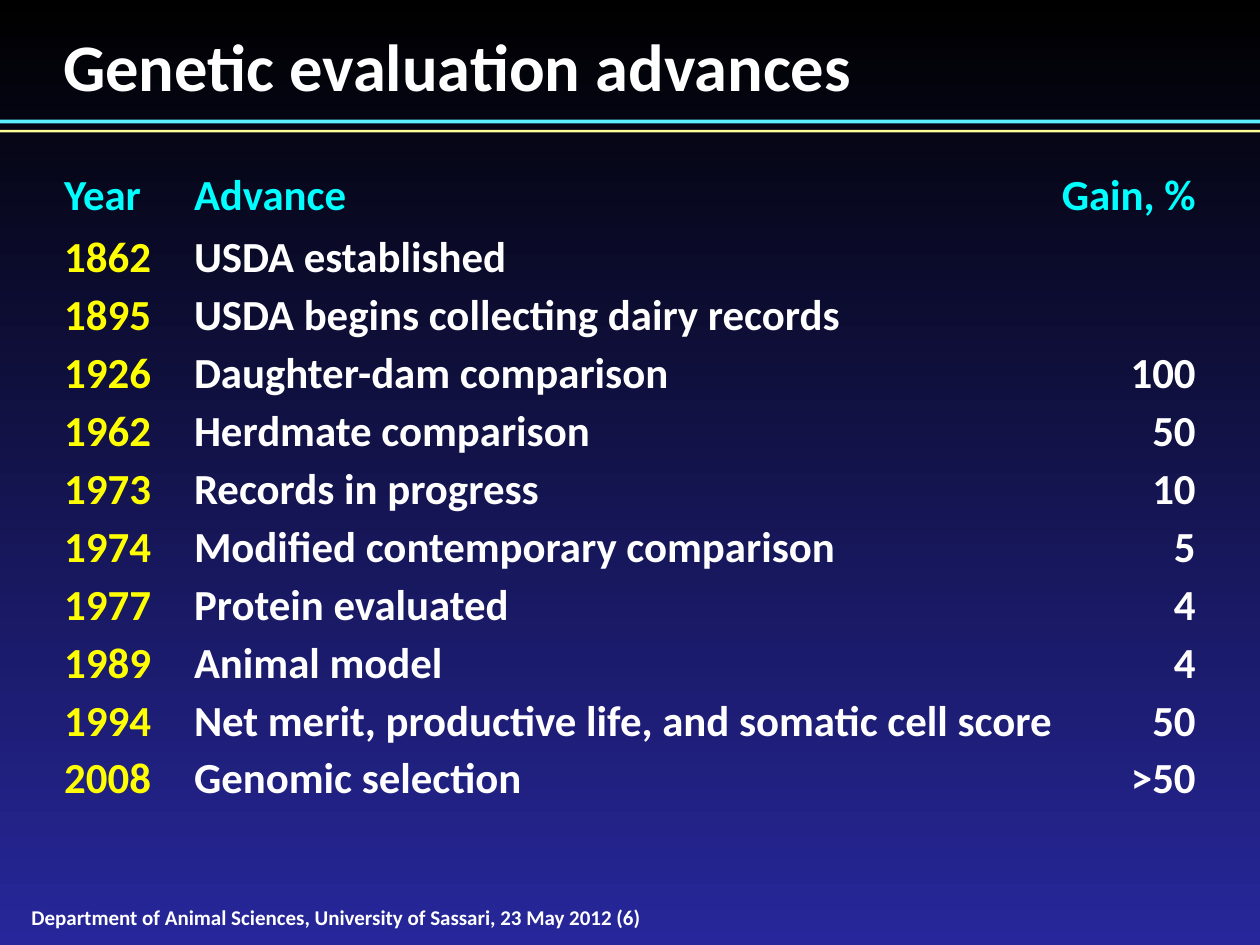
from dataclasses import dataclass
from pptx import Presentation
from pptx.dml.color import RGBColor
from pptx.enum.shapes import MSO_SHAPE
from pptx.enum.text import MSO_ANCHOR, PP_ALIGN
from pptx.util import Inches, Pt

WIDE, HIGH = Inches(10), Inches(7.5)


@dataclass(frozen=True)
class Theme:
    font: str = "Calibri"
    dark: str = "000000"
    blue: str = "27279B"
    white: str = "FFFFFF"
    year: str = "FFFF00"
    head: str = "00FFFF"
    bands: tuple = ("5BEFFF", "FFFF99")
    title: float = 38
    table: float = 24.5
    foot: float = 12


THEME = Theme()
ROWS = [
    ("Year", "Advance", "Gain, %"),
    ("1862", "USDA established", ""),
    ("1895", "USDA begins collecting dairy records", ""),
    ("1926", "Daughter-dam comparison", "100"),
    ("1962", "Herdmate comparison", "50"),
    ("1973", "Records in progress", "10"),
    ("1974", "Modified contemporary comparison", "5"),
    ("1977", "Protein evaluated", "4"),
    ("1989", "Animal model", "4"),
    ("1994", "Net merit, productive life, and somatic cell score", "50"),
    ("2008", "Genomic selection", ">50"),
]
SHARES = (1.03 / 8.98, 6.84 / 8.98, 1.11 / 8.98)


def area(left, top, width, height):
    return [int(WIDE * left), int(HIGH * top), int(WIDE * width), int(HIGH * height)]


def write(frame, text, size, color, align=PP_ALIGN.LEFT):
    frame.text = text
    line = frame.paragraphs[0]
    line.alignment = align
    line.font.size = Pt(size)
    for run in line.runs:
        font = run.font
        font.name, font.size, font.bold = THEME.font, Pt(size), True
        font.color.rgb = RGBColor.from_string(color)


def trim(frame):
    frame.margin_left = frame.margin_right = 0
    frame.margin_top = frame.margin_bottom = 0
    frame.word_wrap = True


def paint(slide):
    fill = slide.background.fill
    fill.gradient()
    fill.gradient_angle = 270
    for place, (stop, color) in enumerate(zip(fill.gradient_stops, (THEME.dark, THEME.blue))):
        stop.position = place
        stop.color.rgb = RGBColor.from_string(color)


def add_title(slide, box, text):
    title = slide.shapes.title
    title.left, title.top, title.width, title.height = box
    trim(title.text_frame)
    title.text_frame.vertical_anchor = MSO_ANCHOR.TOP
    write(title.text_frame, text, THEME.title, THEME.white)


def add_bands(slide, box):
    left, top, width, height = box
    for color, start, share in zip(THEME.bands, (0, 0.8), (0.3, 0.2)):
        band = slide.shapes.add_shape(
            MSO_SHAPE.RECTANGLE, left, top + int(height * start), width, int(height * share))
        band.shadow.inherit = False
        band.fill.solid()
        band.fill.fore_color.rgb = RGBColor.from_string(color)
        band.line.fill.background()


def add_grid(slide, box):
    width, height = box[2:]
    table = slide.shapes.add_table(len(ROWS), len(SHARES), *box).table
    table.first_row = table.horz_banding = False
    style = table._tbl.tblPr[0]
    style.text = "{2D5ABB26-0587-4C30-8999-92F81FD0307C}"
    for column, share in zip(table.columns, SHARES):
        column.width = int(width * share)
    for r, (row, texts) in enumerate(zip(table.rows, ROWS)):
        ends = r in (0, len(ROWS) - 1)
        row.height = Inches(0.49 if ends else 0.46)
        colors = (THEME.year, THEME.white, THEME.white) if r else (THEME.head,) * 3
        for c, (cell, text) in enumerate(zip(row.cells, texts)):
            cell.fill.background()
            cell.margin_left = cell.margin_right = cell.margin_top = 0
            cell.margin_bottom = Inches(0.05 if r else 0)
            align = PP_ALIGN.RIGHT if c == 2 else PP_ALIGN.LEFT
            write(cell.text_frame, text, THEME.table, colors[c], align)


def add_foot(slide, box, text):
    frame = slide.shapes.add_textbox(*box).text_frame
    trim(frame)
    frame.vertical_anchor = MSO_ANCHOR.MIDDLE
    write(frame, text, THEME.foot, THEME.white)


def main():
    deck = Presentation()
    deck.slide_width, deck.slide_height = WIDE, HIGH
    slide = deck.slides.add_slide(deck.slide_layouts[5])
    paint(slide)
    add_foot(slide, area(0.025, 7.18 / 7.5, 0.52, 0.2 / 7.5),
             "Department of Animal Sciences, University of Sassari, 23 May 2012 (6)")
    add_bands(slide, area(0, 0.95 / 7.5, 1, 0.1 / 7.5))
    add_title(slide, area(0.05, 0.2 / 7.5, 0.9, 0.64 / 7.5), "Genetic evaluation advances")
    add_grid(slide, area(0.051, 0.18, 0.898, 5.11 / 7.5))
    deck.save("out.pptx")


if __name__ == "__main__":
    main()
